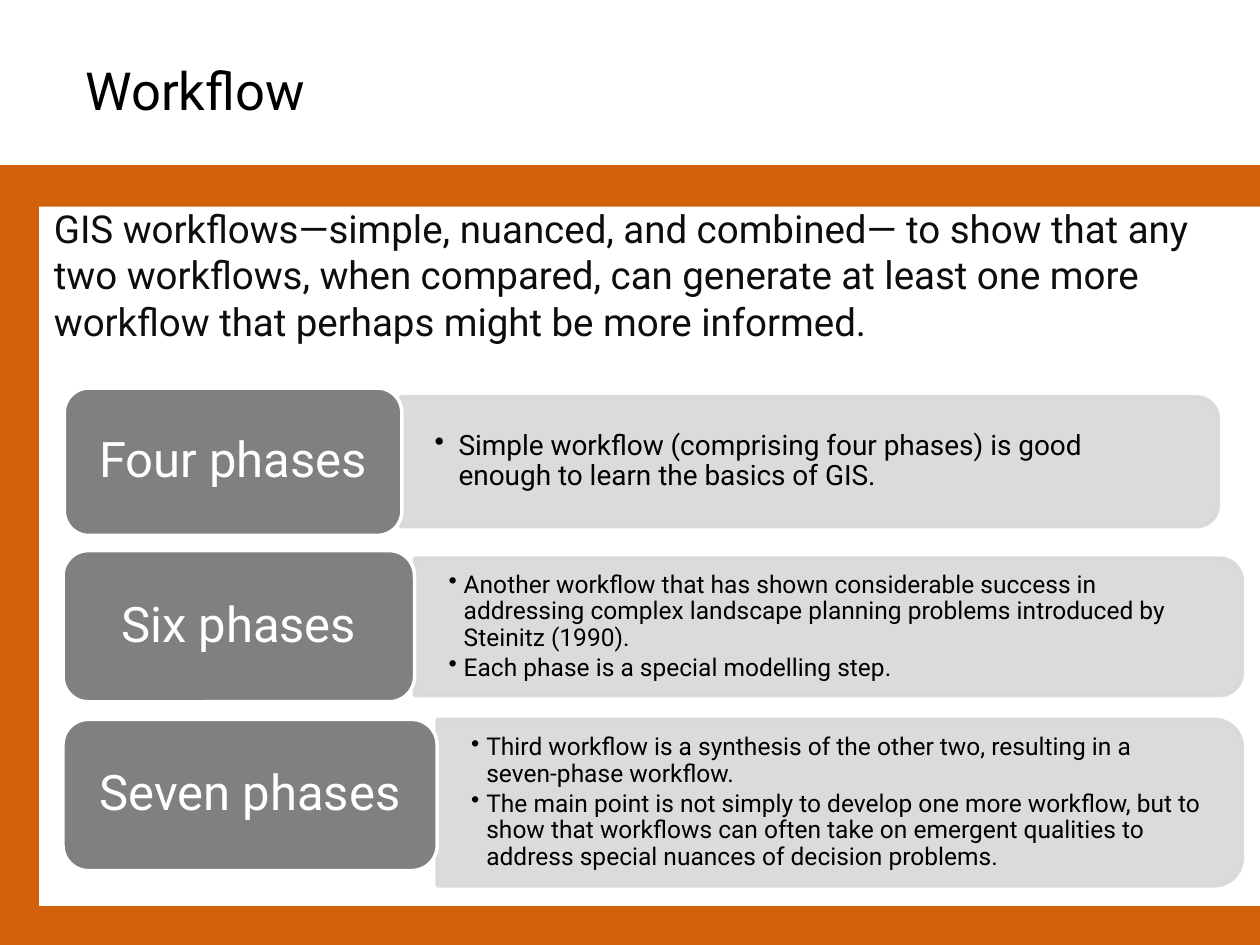
from lxml.etree import SubElement
from pptx import Presentation
from pptx.dml.color import RGBColor
from pptx.enum.shapes import MSO_SHAPE
from pptx.enum.text import MSO_ANCHOR, PP_ALIGN
from pptx.oxml.ns import qn
from pptx.util import Inches, Pt

FONT = "Roboto"
ORANGE = RGBColor(0xD2, 0x61, 0x0C)
WHITE = RGBColor(0xFF, 0xFF, 0xFF)
BLACK = RGBColor(0x00, 0x00, 0x00)
INK = RGBColor(0x0D, 0x0D, 0x0D)
GRAY = RGBColor(0x80, 0x80, 0x80)
LIGHT = RGBColor(0xD8, 0xD8, 0xD8)

INTRO = (
    "GIS workflows—simple, nuanced, and combined— to show that any two workflows, "
    "when compared, can generate at least one more workflow that perhaps might be "
    "more informed."
)
PHASES = [
    ("Four phases", (0.51, 3.08, 2.68, 1.17), (3.18, 3.15, 6.49, 1.03), 16, 0.19, [
        "Simple workflow (comprising four phases) is good enough to learn the basics of GIS.",
    ]),
    ("Six phases", (0.5, 4.37, 2.79, 1.2), (3.29, 4.43, 6.57, 1.09), 14, 0.12, [
        "Another workflow that has shown considerable success in addressing complex "
        "landscape planning problems introduced by Steinitz (1990).",
        "Each phase is a special modelling step.",
    ]),
    ("Seven phases", (0.5, 5.71, 2.97, 1.2), (3.47, 5.71, 6.39, 1.32), 14, 0.12, [
        "Third workflow is a synthesis of the other two, resulting in a seven-phase workflow.",
        "The main point is not simply to develop one more workflow, but to show that "
        "workflows can often take on emergent qualities to address special nuances of "
        "decision problems.",
    ]),
]


def add_box(slide, kind, box, fill, line=None):
    sp = slide.shapes.add_shape(kind, *map(Inches, box))
    sp.shadow.inherit = False
    sp.fill.solid()
    sp.fill.fore_color.rgb = fill
    if line is None:
        sp.line.fill.background()
    else:
        sp.line.color.rgb = line
        sp.line.width = Pt(2)
    return sp


def set_frame(tf, anchor, side, end):
    tf.word_wrap = True
    tf.vertical_anchor = anchor
    tf.margin_left = tf.margin_right = Inches(side)
    tf.margin_top = tf.margin_bottom = Inches(end)


def style(p, text, size, color):
    p.text = text
    p.font.name = FONT
    p.font.size = Pt(size)
    p.font.color.rgb = color


def add_text(slide, box, text, size, color, anchor):
    tf = slide.shapes.add_textbox(*map(Inches, box)).text_frame
    set_frame(tf, anchor, 0.1, 0.05)
    style(tf.paragraphs[0], text, size, color)


def add_label(slide, box, text):
    sp = add_box(slide, MSO_SHAPE.ROUNDED_RECTANGLE, box, GRAY, WHITE)
    tf = sp.text_frame
    set_frame(tf, MSO_ANCHOR.MIDDLE, 0.18, 0.12)
    p = tf.paragraphs[0]
    style(p, text, 28, WHITE)
    p.alignment = PP_ALIGN.CENTER
    p.line_spacing = 0.9


def add_panel(slide, box):
    left, top, width, height = box
    shift = (width - height) / 2
    upright = (left + shift, top - shift, height, width)
    sp = add_box(slide, MSO_SHAPE.ROUND_2_SAME_RECTANGLE, upright, LIGHT, LIGHT)
    sp.rotation = 90
    for color in sp._element.spPr.iter(qn("a:srgbClr")):
        SubElement(color, qn("a:alpha"), val="90000")


def add_bullets(slide, box, items, size, indent):
    left, top, width, height = box
    inner = (left, top + 0.05, width - 0.05, height - 0.1)
    tf = slide.shapes.add_textbox(*map(Inches, inner)).text_frame
    set_frame(tf, MSO_ANCHOR.MIDDLE, 0.27, 0.14)
    for i, item in enumerate(items):
        p = tf.add_paragraph() if i else tf.paragraphs[0]
        style(p, item, size, BLACK)
        p.line_spacing = 0.9
        p.space_after = Pt(0.15 * size)
        pPr = p._p.get_or_add_pPr()
        pPr.set("marL", str(Inches(indent)))
        pPr.set("indent", str(-Inches(indent)))
        bullet = pPr.makeelement(qn("a:buChar"), {"char": "•"})
        pPr.find(qn("a:defRPr")).addprevious(bullet)


def main():
    prs = Presentation()
    prs.slide_width, prs.slide_height = Inches(10), Inches(7.5)
    slide = prs.slides.add_slide(prs.slide_layouts[6])

    add_box(slide, MSO_SHAPE.RECTANGLE, (0, 1.31, 10, 6.19), ORANGE)
    add_box(slide, MSO_SHAPE.RECTANGLE, (0.31, 1.64, 9.69, 5.55), WHITE)
    add_text(slide, (0.58, 0.25, 9, 0.92), "Workflow", 30, BLACK, MSO_ANCHOR.MIDDLE)
    for name, label_box, panel_box, size, indent, items in PHASES:
        add_panel(slide, panel_box)
        add_bullets(slide, panel_box, items, size, indent)
        add_label(slide, label_box, name)
    add_text(slide, (0.33, 1.58, 9.67, 1.25), INTRO, 22, INK, MSO_ANCHOR.TOP)

    prs.save("out.pptx")


if __name__ == "__main__":
    main()
